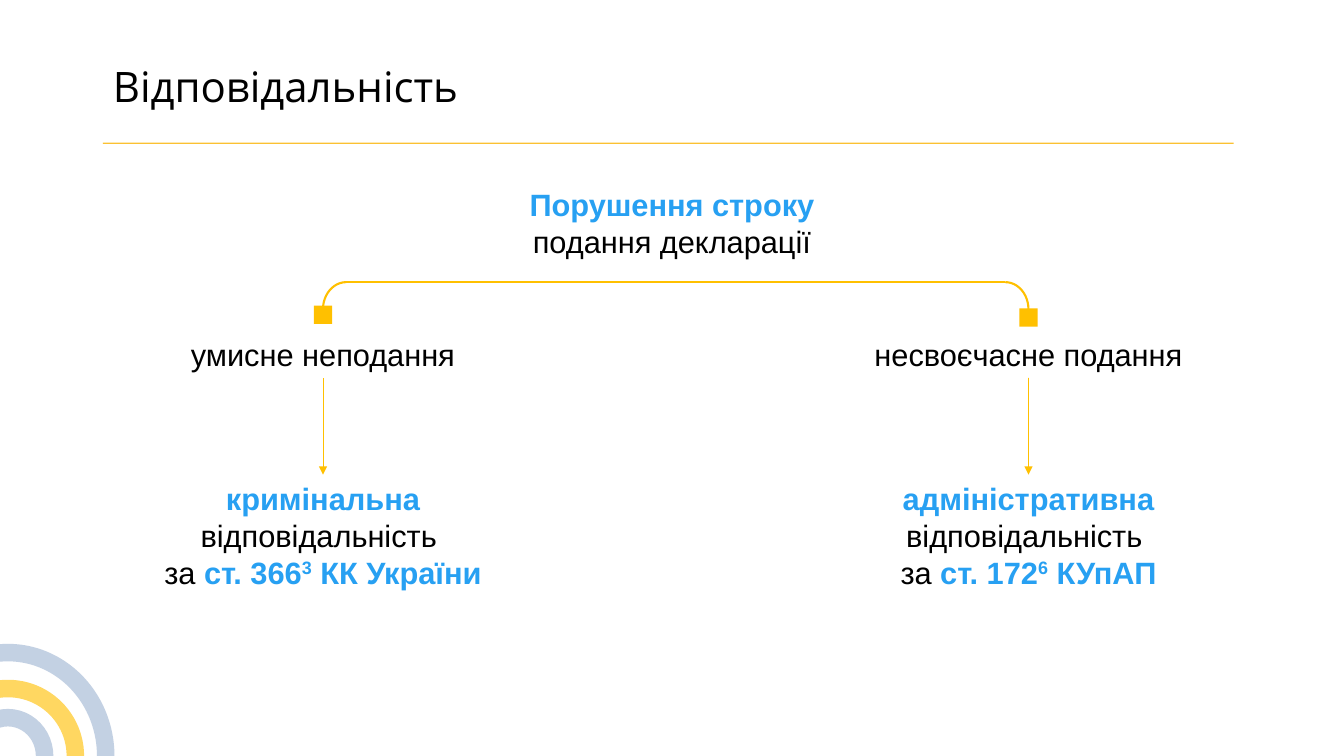
from pptx import Presentation
from pptx.dml.color import RGBColor
from pptx.enum.shapes import MSO_CONNECTOR, MSO_SHAPE
from pptx.enum.text import MSO_ANCHOR, MSO_AUTO_SIZE, PP_ALIGN
from pptx.oxml.ns import qn
from pptx.util import Cm, Pt
from lxml.etree import SubElement

COLORS = {
    "text": "000000",
    "accent": "27A0F2",
    "gold": "FFC000",
    "rule": "FBBB1C",
    "ring": "9FB5D2",
}
SLIDE_W, SLIDE_H = 33.87, 19.05
LEFT_X, RIGHT_X = 8.14, 25.92  # centres of the two branches


def rgb(name):
    return RGBColor.from_string(COLORS[name])


def style_line(line, color, width, opacity=100):
    line.color.rgb = rgb(color)
    line.width = Pt(width)
    if opacity < 100:
        clr = line._get_or_add_ln().find(".//" + qn("a:srgbClr"))
        SubElement(clr, qn("a:alpha"), val=str(opacity * 1000))


def add_line(shapes, x1, y1, x2, y2, color, width, opacity=100):
    c = shapes.add_connector(MSO_CONNECTOR.STRAIGHT, Cm(x1), Cm(y1), Cm(x2), Cm(y2))
    style_line(c.line, color, width, opacity)
    SubElement(c._element.spPr, qn("a:effectLst"))
    return c


def add_outline(shapes, kind, x, y, w, h, color, width, opacity=100):
    sp = shapes.add_shape(kind, Cm(x), Cm(y), Cm(w), Cm(h))
    sp.shadow.inherit = False
    sp.fill.background()
    style_line(sp.line, color, width, opacity)
    return sp


def add_label(s, center, top, w, h, parts):
    """Centred text box; parts are (text, style), style: plain, bold or sup."""
    sp = s.shapes.add_textbox(Cm(center - w / 2), Cm(top), Cm(w), Cm(h))
    tf = sp.text_frame
    tf.word_wrap = True
    tf.auto_size = MSO_AUTO_SIZE.SHAPE_TO_FIT_TEXT
    p = tf.paragraphs[0]
    p.alignment = PP_ALIGN.CENTER
    for text, style in parts:
        if text == "\n":
            p.add_line_break()
            continue
        r = p.add_run()
        r.text = text
        r.font.name = "Arial"
        r.font.size = Pt(22)
        r.font.bold = style != "plain"
        r.font.color.rgb = rgb("text" if style == "plain" else "accent")
        if style == "sup":
            r._r.get_or_add_rPr().set("baseline", "30000")
    return sp


def add_rings(s, cx, cy):
    for w, h, color in ((4.93, 5.21, "ring"), (3.4, 3.4, "gold"), (1.85, 1.93, "ring")):
        add_outline(s.shapes, MSO_SHAPE.OVAL, cx - w / 2, cy - h / 2, w, h, color, 12.5, 62)


def add_title(s, x, y, w, h):
    title = s.shapes.title
    title.left, title.top, title.width, title.height = Cm(x), Cm(y), Cm(w), Cm(h)
    tf = title.text_frame
    tf.text = "Відповідальність"
    tf.word_wrap = True
    tf.auto_size = MSO_AUTO_SIZE.SHAPE_TO_FIT_TEXT
    tf.vertical_anchor = MSO_ANCHOR.TOP
    p = tf.paragraphs[0]
    p.alignment = PP_ALIGN.LEFT
    p.line_spacing = 0.9
    font = p.runs[0].font
    font.name, font.size = "Open Sans", Pt(30)
    font.color.rgb = rgb("text")
    add_line(s.shapes, x, y + 2.06, x + 28.5, y + 2.06, "rule", 1, 90)


def add_bracket(s, left, right, top):
    """Horizontal line whose ends curve down to both branches."""
    w, h = 1.17, 1.37
    shapes = s.shapes.add_group_shape().shapes
    add_line(shapes, left + w / 2, top, right - w / 2, top, "gold", 1.5)
    arc = add_outline(shapes, MSO_SHAPE.ARC, left, top, w, h, "gold", 1.5)
    arc._element.spPr.find(qn("a:xfrm")).set("flipH", "1")
    add_outline(shapes, MSO_SHAPE.ARC, right - w, top, w, h, "gold", 1.5)


def add_branch(s, center, marker_top, cause, cause_w, outcome, outcome_w):
    side = 0.46
    marker = s.shapes.add_shape(
        MSO_SHAPE.RECTANGLE, Cm(center - side / 2), Cm(marker_top), Cm(side), Cm(side))
    marker.shadow.inherit = False
    marker.fill.solid()
    marker.fill.fore_color.rgb = rgb("gold")
    marker.line.fill.background()

    cause_box = add_label(s, center, 8.33, cause_w, 1.19, [(cause, "plain")])
    outcome_box = add_label(s, center, 11.96, outcome_w, 3.07, outcome)
    arrow = add_line(s.shapes, center, 9.52, center, 11.96, "gold", 0.5)
    arrow.begin_connect(cause_box, 2)
    arrow.end_connect(outcome_box, 0)
    SubElement(arrow.line._get_or_add_ln(), qn("a:tailEnd"), type="triangle")


def outcome_parts(kind, article, note, code):
    return [(kind + " ", "bold"), ("відповідальність ", "plain"), ("\n", "plain"),
            ("за ", "plain"), ("ст. " + article, "bold"), (note, "sup"), (" " + code, "bold")]


def main():
    prs = Presentation()
    prs.slide_width, prs.slide_height = Cm(SLIDE_W), Cm(SLIDE_H)
    s = prs.slides.add_slide(prs.slide_layouts[5])

    add_rings(s, 0.2, SLIDE_H)
    add_title(s, 2.59, 1.55, 26.67, 1.55)

    # Violation splitting into two kinds of liability
    add_label(s, SLIDE_W / 2, 4.55, 7.95, 2.13,
              [("Порушення строку ", "bold"), ("подання декларації", "plain")])
    add_bracket(s, LEFT_X, RIGHT_X, 7.11)
    add_branch(s, LEFT_X, 7.7, "умисне неподання", 7.95,
               outcome_parts("кримінальна", "366", "3", "КК України"), 9.42)
    add_branch(s, RIGHT_X, 7.77, "несвоєчасне подання", 9.45,
               outcome_parts("адміністративна", "172", "6", "КУпАП"), 8.36)

    prs.save("out.pptx")


if __name__ == "__main__":
    main()
